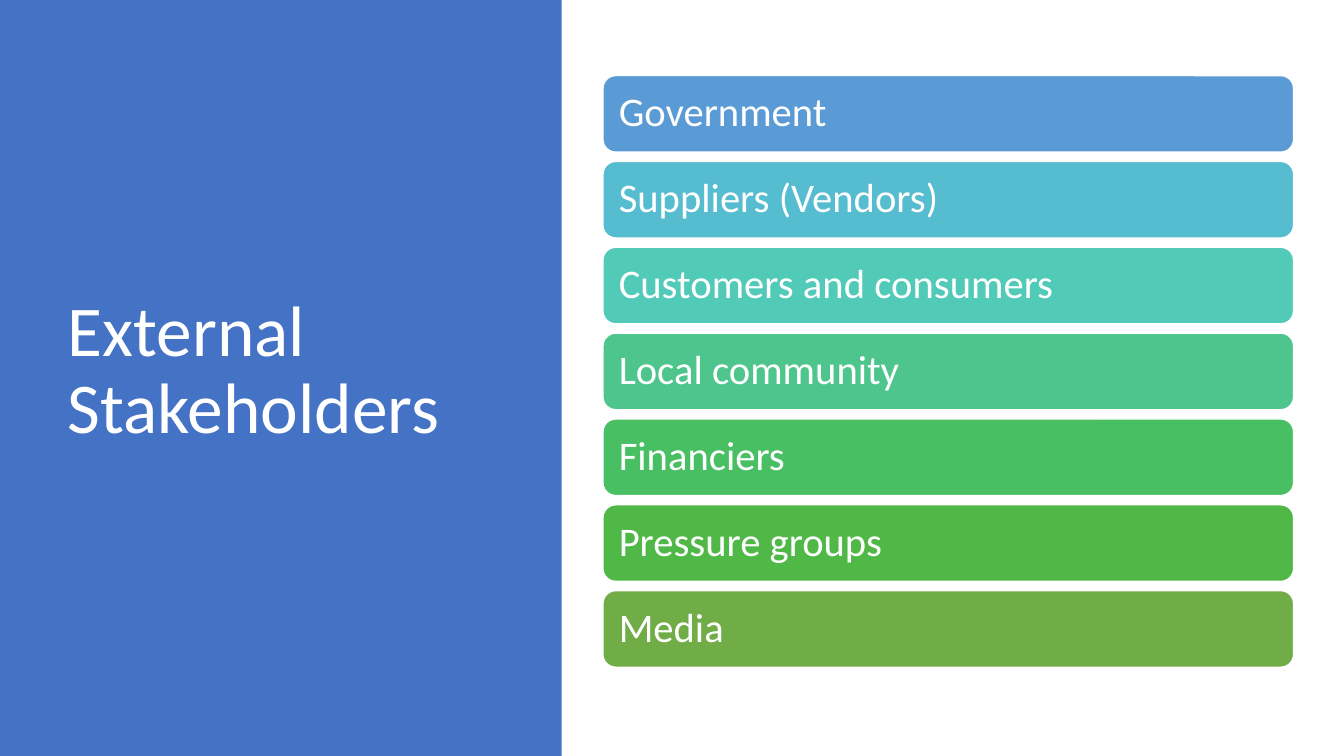
import dataclasses

import pptx
import pptx.dml.color
import pptx.enum.shapes
import pptx.enum.text
import pptx.presentation
import pptx.shapes.autoshape
import pptx.slide
import pptx.text.text
import pptx.util

RGBColor = pptx.dml.color.RGBColor
Inches = pptx.util.Inches
Shape = pptx.enum.shapes.MSO_SHAPE

WHITE = RGBColor(0xFF, 0xFF, 0xFF)
PANEL_BLUE = RGBColor(0x44, 0x72, 0xC4)
SKY = RGBColor(0x5B, 0x9B, 0xD5)
CYAN = RGBColor(0x56, 0xBC, 0xD0)
TURQUOISE = RGBColor(0x52, 0xCA, 0xB8)
JADE = RGBColor(0x4D, 0xC5, 0x8D)
EMERALD = RGBColor(0x49, 0xBF, 0x64)
GREEN = RGBColor(0x50, 0xB8, 0x46)
OLIVE = RGBColor(0x70, 0xAD, 0x47)

FONT = "Calibri"
BAR_LEFT, BAR_WIDTH, BAR_HEIGHT = 5.98, 6.85, 0.76
FIRST_TOP, LAST_TOP = 0.75, 5.86
BAR_INSET = 0.12


@dataclasses.dataclass(frozen=True)
class Stakeholder:
    name: str
    color: RGBColor


STAKEHOLDERS = [
    Stakeholder("Government", SKY),
    Stakeholder("Suppliers (Vendors)", CYAN),
    Stakeholder("Customers and consumers", TURQUOISE),
    Stakeholder("Local community", JADE),
    Stakeholder("Financiers", EMERALD),
    Stakeholder("Pressure groups", GREEN),
    Stakeholder("Media", OLIVE),
]


def write_text(frame: pptx.text.text.TextFrame, text: str, *, size: float,
               color: RGBColor = WHITE, inset: float | None = None) -> None:
    """Fill a frame with one left-aligned, vertically centred paragraph."""
    frame.word_wrap = True
    frame.auto_size = pptx.enum.text.MSO_AUTO_SIZE.NONE
    frame.vertical_anchor = pptx.enum.text.MSO_ANCHOR.MIDDLE
    if inset is not None:
        frame.margin_left = frame.margin_right = Inches(inset)
        frame.margin_top = frame.margin_bottom = Inches(inset)
    para = frame.paragraphs[0]
    para.alignment = pptx.enum.text.PP_ALIGN.LEFT
    para.line_spacing = 0.9
    span = para.add_run()
    span.text = text
    span.font.name = FONT
    span.font.size = pptx.util.Pt(size)
    span.font.color.rgb = color


def add_panel(page: pptx.slide.Slide) -> None:
    """Draw the blue panel behind everything else."""
    panel = page.shapes.add_shape(
        Shape.RECTANGLE, 0, 0, Inches(5.57), Inches(7.5))
    panel.shadow.inherit = False
    panel.fill.solid()
    panel.fill.fore_color.rgb = PANEL_BLUE
    panel.line.fill.background()
    page.shapes.element.insert(2, panel.element)


def add_title(page: pptx.slide.Slide, text: str) -> None:
    title = page.shapes.title
    title.left, title.top = Inches(0.57), Inches(0.68)
    title.width, title.height = Inches(4.16), Inches(6.02)
    write_text(title.text_frame, text, size=51)


def add_bar(page: pptx.slide.Slide, stakeholder: Stakeholder,
            top: float) -> None:
    bar = page.shapes.add_shape(
        Shape.ROUNDED_RECTANGLE, Inches(BAR_LEFT), Inches(top),
        Inches(BAR_WIDTH), Inches(BAR_HEIGHT))
    bar.shadow.inherit = False
    bar.fill.solid()
    bar.fill.fore_color.rgb = stakeholder.color
    bar.line.color.rgb = WHITE
    bar.line.width = pptx.util.Pt(1)
    write_text(bar.text_frame, stakeholder.name, size=29, inset=BAR_INSET)


def main() -> None:
    deck = pptx.Presentation()
    deck.slide_width, deck.slide_height = Inches(13.33), Inches(7.5)
    page = deck.slides.add_slide(deck.slide_layouts.get_by_name("Title Only"))

    # Left side: panel and title
    add_panel(page)
    add_title(page, "External Stakeholders")

    # Right side: evenly spaced stakeholder bars
    pitch = (LAST_TOP - FIRST_TOP) / (len(STAKEHOLDERS) - 1)
    for index, stakeholder in enumerate(STAKEHOLDERS):
        add_bar(page, stakeholder, FIRST_TOP + index * pitch)

    deck.save("out.pptx")


if __name__ == "__main__":
    main()
